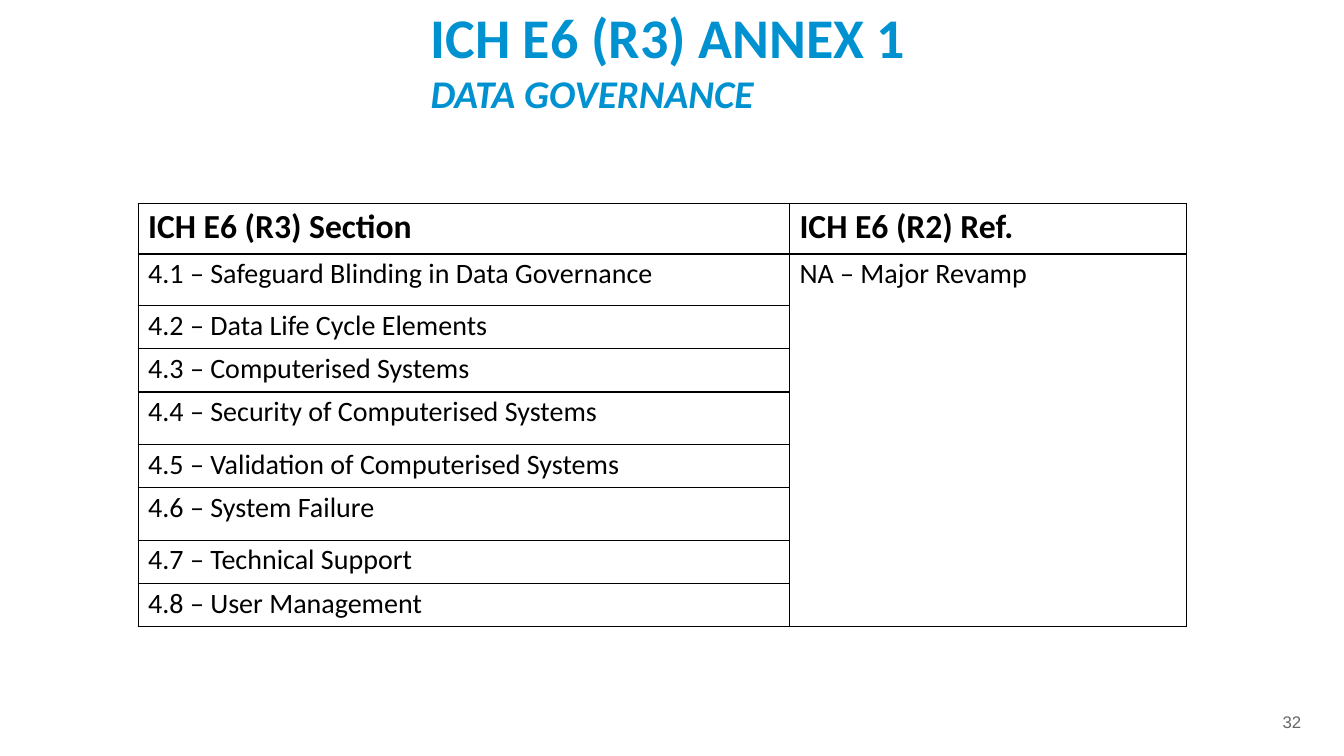
from lxml.etree import SubElement
from pptx import Presentation
from pptx.dml.color import RGBColor
from pptx.enum.text import MSO_ANCHOR, MSO_AUTO_SIZE, PP_ALIGN
from pptx.oxml.ns import qn
from pptx.util import Inches, Pt

BLUE = RGBColor(0x00, 0x92, 0xD0)
GREY = RGBColor(0x66, 0x66, 0x66)
BLACK = RGBColor(0x00, 0x00, 0x00)

TITLE = [("ICH E6 (R3) ANNEX 1", 40, 47.2, False),
         ("DATA GOVERNANCE", 28, 32.9, True)]
PAGE = "32"
HEADER = ("ICH E6 (R3) Section", "ICH E6 (R2) Ref.")
SECTIONS = [
    ("4.1 – Safeguard Blinding in Data Governance", 0.51),
    ("4.2 – Data Life Cycle Elements", 0.43),
    ("4.3 – Computerised Systems", 0.43),
    ("4.4 – Security of Computerised Systems", 0.52),
    ("4.5 – Validation of Computerised Systems", 0.43),
    ("4.6 – System Failure", 0.52),
    ("4.7 – Technical Support", 0.43),
    ("4.8 – User Management", 0.43),
]
REFERENCE = "NA – Major Revamp"
COLUMN_WIDTHS = (6.46, 3.94)
HEADER_HEIGHT = 0.5


def set_font(p, name, size, color, bold=False, italic=False):
    p.font.name = name
    p.font.size = Pt(size)
    p.font.color.rgb = color
    p.font.bold = bold
    p.font.italic = italic


def set_frame(tf, left, top):
    tf.margin_left, tf.margin_top = Inches(left), Inches(top)
    tf.margin_right = tf.margin_bottom = 0
    tf.vertical_anchor = MSO_ANCHOR.TOP
    tf.auto_size = MSO_AUTO_SIZE.NONE
    tf.word_wrap = True


def add_borders(cell):
    tc_pr = cell._tc.get_or_add_tcPr()
    for i, side in enumerate(("lnL", "lnR", "lnT", "lnB")):
        ln = SubElement(tc_pr, qn(f"a:{side}"), w=str(Pt(1)))
        fill = SubElement(ln, qn("a:solidFill"))
        SubElement(fill, qn("a:srgbClr"), val=str(BLACK))
        tc_pr.insert(i, ln)


def fill_cell(cell, text, header):
    cell.fill.background()
    cell.margin_left, cell.margin_top = Inches(0.1), Inches(0.03)
    cell.margin_right = cell.margin_bottom = 0
    p = cell.text_frame.paragraphs[0]
    p.text = text
    set_font(p, "Calibri", 24 if header else 20, BLACK, bold=header)
    add_borders(cell)


prs = Presentation()
prs.slide_width, prs.slide_height = Inches(13.33), Inches(7.5)
s = prs.slides.add_slide(prs.slide_layouts[5])

title = s.shapes.title
title.left, title.top = Inches(4.04), Inches(-0.02)
title.width, title.height = Inches(7.61), Inches(1.31)
tf = title.text_frame
set_frame(tf, 0.23, 0.06)
tf.text = "\n".join(text for text, *_ in TITLE)
for p, (_, size, spacing, italic) in zip(tf.paragraphs, TITLE):
    p.alignment = PP_ALIGN.LEFT
    p.line_spacing = Pt(spacing)
    set_font(p, "Calibri", size, BLUE, bold=True, italic=italic)

rows = [HEADER] + [(text, "") for text, _ in SECTIONS]
rows[1] = (SECTIONS[0][0], REFERENCE)
heights = [HEADER_HEIGHT] + [height for _, height in SECTIONS]
table = s.shapes.add_table(len(rows), len(COLUMN_WIDTHS), Inches(1.37), Inches(2.02),
                           Inches(sum(COLUMN_WIDTHS)), Inches(sum(heights))).table
table.horz_banding = False
for column, width in zip(table.columns, COLUMN_WIDTHS):
    column.width = Inches(width)
for i, (texts, height) in enumerate(zip(rows, heights)):
    table.rows[i].height = Inches(height)
    for j, text in enumerate(texts):
        fill_cell(table.cell(i, j), text, header=i == 0)
table.cell(1, 1).merge(table.cell(len(rows) - 1, 1))

number = s.shapes.add_textbox(Inches(12.68), Inches(7.06), Inches(0.28), Inches(0.21))
tf = number.text_frame
set_frame(tf, 0.04, 0)
p = tf.paragraphs[0]
p.text = PAGE
p.line_spacing = Pt(14.2)
set_font(p, "Arial", 12, GREY)

prs.save("out.pptx")
